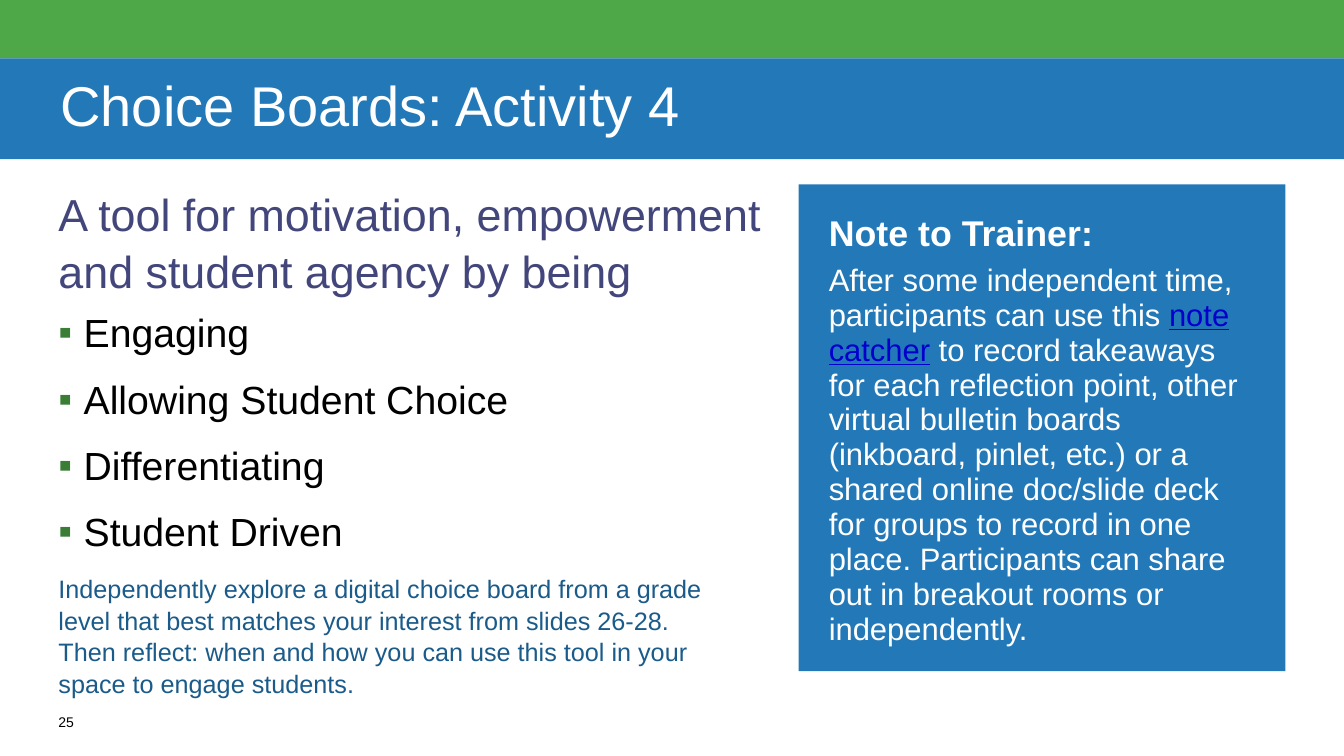
from dataclasses import dataclass

from lxml import etree
from pptx import Presentation
from pptx.dml.color import RGBColor
from pptx.enum.shapes import MSO_SHAPE
from pptx.enum.text import MSO_ANCHOR, PP_ALIGN
from pptx.oxml.ns import qn
from pptx.util import Inches, Pt

RECT = MSO_SHAPE.RECTANGLE
TOP, MIDDLE = MSO_ANCHOR.TOP, MSO_ANCHOR.MIDDLE
LEFT = PP_ALIGN.LEFT


@dataclass(frozen=True)
class Theme:
    font: str = "Arial"
    green: str = "4EA848"
    blue: str = "2379B8"
    white: str = "FFFFFF"
    black: str = "000000"
    purple: str = "43467B"
    bullet: str = "3A7E36"
    navy: str = "1A5B8A"
    link: str = "0000CC"
    title: float = 40
    lead: float = 32
    item: float = 28
    task: float = 18
    note_head: float = 25.5
    note: float = 22.1
    number: float = 10


class SlideBuilder:
    def __init__(self, slide, theme):
        self.slide = slide
        self.theme = theme

    def panel(self, x, y, w, h, color):
        sp = self.slide.shapes.add_shape(RECT, Inches(x), Inches(y), Inches(w), Inches(h))
        sp.shadow.inherit = False
        sp.fill.solid()
        sp.fill.fore_color.rgb = RGBColor.from_string(color)
        sp.line.fill.background()
        return sp.text_frame

    def textbox(self, x, y, w, h):
        box = self.slide.shapes.add_textbox(Inches(x), Inches(y), Inches(w), Inches(h))
        return box.text_frame

    def frame(self, tf, inset_x=0, inset_y=0, anchor=TOP):
        layout = {
            "word_wrap": True,
            "vertical_anchor": anchor,
            "margin_left": Inches(inset_x),
            "margin_right": Inches(inset_x),
            "margin_top": Inches(inset_y),
            "margin_bottom": Inches(inset_y),
        }
        for name, value in layout.items():
            setattr(tf, name, value)

    def bullet(self, p):
        pPr = p._p.get_or_add_pPr()
        pPr.set("marL", str(Inches(0.25)))
        pPr.set("indent", str(-Inches(0.25)))
        color = etree.SubElement(pPr, qn("a:buClr"))
        etree.SubElement(color, qn("a:srgbClr"), val=self.theme.bullet)
        etree.SubElement(pPr, qn("a:buFont"), typeface=self.theme.font)
        etree.SubElement(pPr, qn("a:buChar"), char="▪")

    def paragraph(self, tf, runs, size, color, spacing=1.05, before=6, after=6, bulleted=False):
        first = not tf.paragraphs[0].runs
        p = tf.paragraphs[0] if first else tf.add_paragraph()
        if bulleted:
            self.bullet(p)
        layout = {
            "alignment": LEFT,
            "line_spacing": spacing,
            "space_before": Pt(0 if first else before),
            "space_after": Pt(after),
        }
        for name, value in layout.items():
            setattr(p, name, value)
        for text, extra in runs:
            r = p.add_run()
            r.text = text
            style = {"name": self.theme.font, "size": Pt(size), "color": color, **extra}
            r.font.color.rgb = RGBColor.from_string(style.pop("color"))
            for name, value in style.items():
                setattr(r.font, name, value)


def main():
    prs = Presentation()
    prs.slide_width, prs.slide_height = Inches(13.33), Inches(7.5)
    theme = Theme()
    s = SlideBuilder(prs.slides.add_slide(prs.slide_layouts[6]), theme)
    margin = 0.58

    s.panel(0, 0, 13.33, 0.58, theme.green)
    title = s.panel(0, 0.58, 13.33, 1, theme.blue)
    s.frame(title, inset_x=0.6, anchor=MIDDLE)
    s.paragraph(title, [("Choice Boards: Activity 4", {})], theme.title, theme.white, 0.9, after=0)

    lead = s.textbox(margin, 1.83, 7.08, 1.08)
    s.frame(lead)
    s.paragraph(lead, [("A tool for motivation, empowerment and student agency by being", {})],
                theme.lead, theme.purple)

    qualities = s.textbox(margin, 3.04, 6.58, 2.5)
    s.frame(qualities)
    for quality in ("Engaging", "Allowing Student Choice", "Differentiating", "Student Driven"):
        s.paragraph(qualities, [(quality, {})], theme.item, theme.black, bulleted=True)

    task = s.textbox(margin, 5.67, 6.58, 1.21)
    s.frame(task)
    s.paragraph(task, [(
        "Independently explore a digital choice board from a grade level that best matches "
        "your interest from slides 26-28. Then reflect: when and how you can use this tool "
        "in your space to engage students.", {})], theme.task, theme.navy)

    note = s.panel(7.92, 1.83, 4.83, 4.83, theme.blue)
    s.frame(note, inset_x=0.3, inset_y=0.3)
    s.paragraph(note, [("Note to Trainer:", {"bold": True})],
                theme.note_head, theme.white, 0.94, after=0)
    s.paragraph(note, [
        ("After some independent time, participants can use this ", {}),
        ("note catcher", {"color": theme.link, "underline": True}),
        (" to record takeaways for each reflection point, other virtual bulletin boards "
         "(inkboard, pinlet, etc.) or a shared online doc/slide deck for groups to record "
         "in one place. Participants can share out in breakout rooms or independently.", {}),
    ], theme.note, theme.white, 0.94)

    number = s.textbox(margin, 7.08, 0.42, 0.25)
    s.frame(number)
    s.paragraph(number, [("25", {})], theme.number, theme.black, 1, after=0)

    prs.save("out.pptx")


if __name__ == "__main__":
    main()
